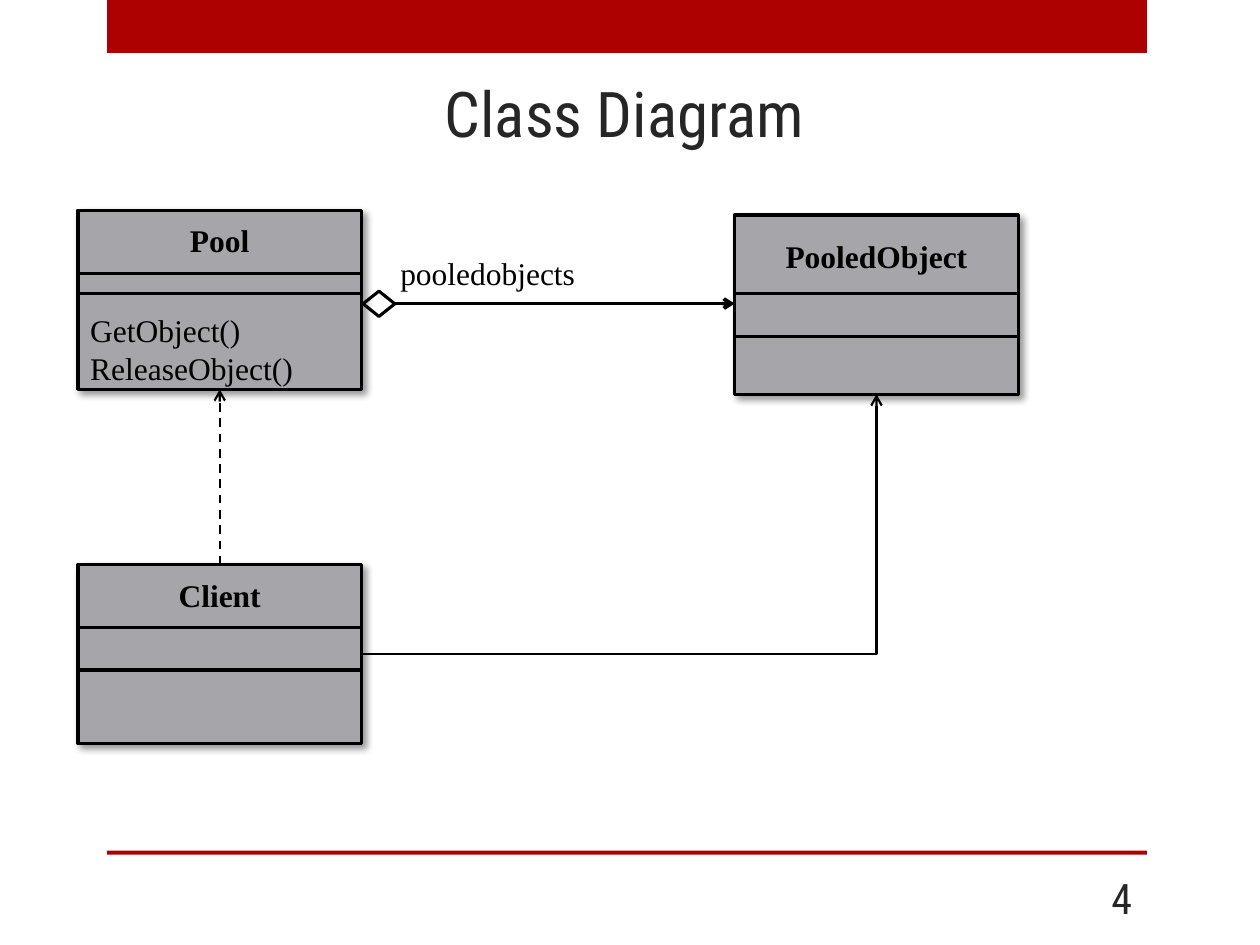
import pptx
import pptx.dml.color
import pptx.enum.dml
import pptx.enum.shapes
import pptx.enum.text
import pptx.oxml
import pptx.oxml.ns
import pptx.util

Cm, Pt = pptx.util.Cm, pptx.util.Pt
qn = pptx.oxml.ns.qn
Shape = pptx.enum.shapes.MSO_SHAPE
Connector = pptx.enum.shapes.MSO_CONNECTOR
Align = pptx.enum.text.PP_ALIGN
Anchor = pptx.enum.text.MSO_ANCHOR

RED, GRAY, BLACK, DARK = "AD0101", "A5A5AA", "000000", "262626"
HEADING_FONT, DIAGRAM_FONT = "Roboto Condensed", "Times New Roman"
BOX_WIDTH, BOX_HEIGHT, LABEL_HEIGHT = 5.72, 3.61, 1.02
SHADOW = (
    f'<a:outerShdw {pptx.oxml.ns.nsdecls("a")} blurRad="{Pt(4)}" dist="{Pt(3)}" '
    'dir="2700000" algn="tl" rotWithShape="0">'
    '<a:srgbClr val="000000"><a:alpha val="40000"/></a:srgbClr></a:outerShdw>'
)


def color(value):
    return pptx.dml.color.RGBColor.from_string(value)


class ClassDiagram:
    def __init__(self, slide):
        self.slide = slide
        self.shapes = slide.shapes

    def set_text(self, target, text, size=18, font=DIAGRAM_FONT, fill=BLACK,
                 bold=False, align=Align.LEFT):
        frame = target.text_frame
        frame.text = text
        for paragraph in frame.paragraphs:
            paragraph.alignment = align
            for run in paragraph.runs:
                run.font.size = Pt(size)
                run.font.name = font
                run.font.bold = bold
                run.font.color.rgb = color(fill)

    def title(self, text, left, top, width, height):
        heading = self.shapes.title
        heading.left, heading.top = Cm(left), Cm(top)
        heading.width, heading.height = Cm(width), Cm(height)
        heading.text_frame.vertical_anchor = Anchor.MIDDLE
        self.set_text(heading, text, 36, HEADING_FONT, DARK, align=Align.CENTER)

    def page_number(self, text, left, top, width, height):
        number = self.shapes.add_textbox(Cm(left), Cm(top), Cm(width), Cm(height))
        number.text_frame.word_wrap = True
        number.text_frame.vertical_anchor = Anchor.MIDDLE
        self.set_text(number, text, 24, HEADING_FONT, DARK, align=Align.RIGHT)

    def label(self, text, left, top, width, height=LABEL_HEIGHT, **style):
        label = self.shapes.add_textbox(Cm(left), Cm(top), Cm(width), Cm(height))
        label.text_frame.word_wrap = False
        label.text_frame.auto_size = pptx.enum.text.MSO_AUTO_SIZE.SHAPE_TO_FIT_TEXT
        self.set_text(label, text, **style)

    def shape(self, kind, left, top, width, height, fill=None, line=None):
        shape = self.shapes.add_shape(kind, Cm(left), Cm(top), Cm(width), Cm(height))
        shape.shadow.inherit = False
        if fill:
            shape.fill.solid()
            shape.fill.fore_color.rgb = color(fill)
        else:
            shape.fill.background()
        if line:
            shape.line.color.rgb = color(BLACK)
            shape.line.width = Pt(line)
        else:
            shape.line.fill.background()
        return shape

    def connect(self, start, end, weight=2, arrow=False, dashed=False, elbow=False):
        kind = Connector.ELBOW if elbow else Connector.STRAIGHT
        link = self.shapes.add_connector(kind, *map(Cm, start + end))
        link.line.color.rgb = color(BLACK)
        link.line.width = Pt(weight)
        if dashed:
            link.line.dash_style = pptx.enum.dml.MSO_LINE.DASH
        properties = link._element.spPr
        if elbow:
            properties.find(qn("a:prstGeom")).set("prst", "bentConnector2")
        if arrow:
            outline = properties.find(qn("a:ln"))
            outline.append(outline.makeelement(qn("a:tailEnd"), {"type": "arrow"}))
        properties.append(properties.makeelement(qn("a:effectLst"), {}))

    def class_box(self, name, left, top, dividers, name_offset, name_width):
        box = self.shape(Shape.RECTANGLE, left, top, BOX_WIDTH, BOX_HEIGHT, GRAY, 2)
        effects = box._element.spPr.find(qn("a:effectLst"))
        effects.append(pptx.oxml.parse_xml(SHADOW))
        for offset in dividers:
            y = top + offset
            self.connect((left, y), (left + BOX_WIDTH, y))
        self.label(name, left + (BOX_WIDTH - name_width) / 2, top + name_offset,
                   name_width, bold=True, align=Align.CENTER)


def main():
    deck = pptx.Presentation()
    deck.slide_width, deck.slide_height = Cm(25.4), Cm(19.05)
    diagram = ClassDiagram(deck.slides.add_slide(deck.slide_layouts[5]))

    # Page frame
    diagram.shape(Shape.RECTANGLE, 2.16, 0, 20.96, 1.07, RED)
    diagram.shape(Shape.RECTANGLE, 2.16, 17.15, 20.96, 0.08, RED)
    diagram.title("Class Diagram", 2.11, 1.35, 20.96, 1.83)
    diagram.page_number("4", 20.96, 17.58, 2.11, 1.02)

    # Classes
    pool_left, pool_top, client_top = 1.57, 4.24, 11.38
    pooled_left, pooled_top = 14.81, 4.34
    diagram.class_box("PooledObject", pooled_left, pooled_top, (1.58, 2.44), 0.31, 4.22)
    diagram.class_box("Pool", pool_left, pool_top, (1.27, 1.68), 0.1, 1.73)
    diagram.class_box("Client", pool_left, client_top, (1.27, 2.13), 0.1, 2.18)
    diagram.label("GetObject()\nReleaseObject()", pool_left, 6.15, 4.65, 1.8)

    # Pool aggregates its pooled objects
    diagram.connect((7.96, 6.12), (pooled_left, 6.12), arrow=True)
    diagram.shape(Shape.DIAMOND, 7.32, 5.87, 0.64, 0.51, line=1.75)
    diagram.label("pooledobjects", 7.82, 5, 4.06)

    # Client uses the pool and the pooled object
    pool_center = pool_left + BOX_WIDTH / 2
    pooled_center = pooled_left + BOX_WIDTH / 2
    diagram.connect((pool_center, client_top), (pool_center, pool_top + BOX_HEIGHT),
                    1.25, arrow=True, dashed=True)
    diagram.connect((pool_left + BOX_WIDTH, 13.18),
                    (pooled_center, pooled_top + BOX_HEIGHT),
                    1.25, arrow=True, elbow=True)

    deck.save("out.pptx")


if __name__ == "__main__":
    main()
